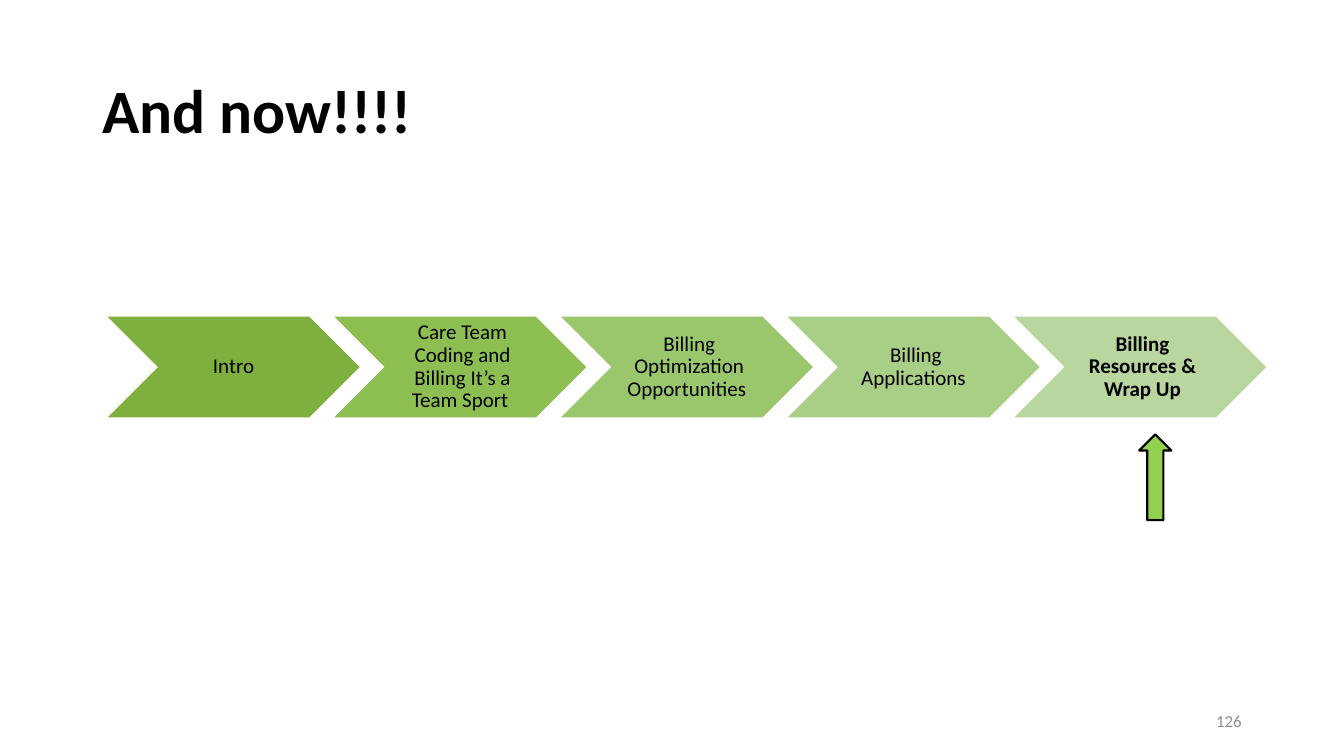
"""Build the agenda slide: a row of chevron steps with an arrow at the current one."""
from dataclasses import dataclass

from pptx import Presentation
from pptx.dml.color import RGBColor
from pptx.enum.shapes import MSO_SHAPE as Preset
from pptx.enum.text import MSO_ANCHOR as Anchor, MSO_AUTO_SIZE as AutoSize, PP_ALIGN as Align
from pptx.shapes.autoshape import Shape
from pptx.slide import Slide
from pptx.util import Pt

FONT = "Calibri"
BLACK = RGBColor(0x00, 0x00, 0x00)
GREY = RGBColor(0x8C, 0x8C, 0x8C)
ARROW_GREEN = RGBColor(0x92, 0xD0, 0x50)

STEP_LEFT, STEP_TOP = 76.9, 226.2
STEP_WIDTH, STEP_HEIGHT = 180, 72
STEP_PITCH = 161.9


@dataclass(frozen=True)
class Step:
    label: str
    fill: RGBColor
    bold: bool = False


STEPS = (
    Step("Intro ", RGBColor(0x7E, 0xAF, 0x3F)),
    Step("Care Team Coding and Billing It’s a Team Sport ", RGBColor(0x8C, 0xBE, 0x52)),
    Step("Billing Optimization Opportunities ", RGBColor(0x9A, 0xC6, 0x6C)),
    Step("Billing Applications ", RGBColor(0xA9, 0xCE, 0x86)),
    Step("Billing Resources & Wrap Up", RGBColor(0xB9, 0xD6, 0x9F), bold=True),
)


def write_text(shape: Shape, text: str, size: float, color: RGBColor, align: Align,
               bold: bool = False, line_spacing: float = 1.0) -> None:
    frame = shape.text_frame
    frame.text = text
    frame.word_wrap = True
    frame.auto_size = AutoSize.NONE
    frame.vertical_anchor = Anchor.MIDDLE
    paragraph = frame.paragraphs[0]
    paragraph.alignment = align
    paragraph.line_spacing = line_spacing
    font = paragraph.font
    font.name, font.size, font.bold = FONT, Pt(size), bold
    font.color.rgb = color


def add_title(slide: Slide, text: str) -> None:
    title = slide.shapes.title
    title.left, title.top = Pt(66), Pt(28.8)
    title.width, title.height = Pt(828), Pt(104.4)
    write_text(title, text, 44, BLACK, Align.LEFT, bold=True, line_spacing=0.9)


def add_step(slide: Slide, index: int, step: Step) -> None:
    chevron = slide.shapes.add_shape(
        Preset.CHEVRON, Pt(STEP_LEFT + index * STEP_PITCH), Pt(STEP_TOP),
        Pt(STEP_WIDTH), Pt(STEP_HEIGHT))
    chevron.shadow.inherit = False
    chevron.fill.solid()
    chevron.fill.fore_color.rgb = step.fill
    chevron.line.fill.background()
    frame = chevron.text_frame
    frame.margin_left = Pt(4.8)
    frame.margin_top = frame.margin_right = frame.margin_bottom = Pt(1.6)
    write_text(chevron, step.label, 15, BLACK, Align.CENTER, step.bold, 0.9)


def add_current_arrow(slide: Slide) -> None:
    arrow = slide.shapes.add_shape(Preset.DOWN_ARROW, Pt(813.7), Pt(310.3), Pt(23), Pt(61.2))
    arrow.rotation = 180
    arrow.shadow.inherit = False
    arrow.fill.solid()
    arrow.fill.fore_color.rgb = ARROW_GREEN
    arrow.line.color.rgb = BLACK
    arrow.line.width = Pt(1.5)


def add_slide_number(slide: Slide, number: str) -> None:
    box = slide.shapes.add_textbox(Pt(678), Pt(500.5), Pt(216), Pt(28.8))
    write_text(box, number, 12, GREY, Align.RIGHT)


def main() -> None:
    presentation = Presentation()
    presentation.slide_width, presentation.slide_height = Pt(960), Pt(540)
    slide = presentation.slides.add_slide(presentation.slide_layouts[5])
    add_title(slide, "And now!!!!")
    for index, step in enumerate(STEPS):
        add_step(slide, index, step)
    add_slide_number(slide, "126")
    add_current_arrow(slide)
    presentation.save("out.pptx")


if __name__ == "__main__":
    main()
